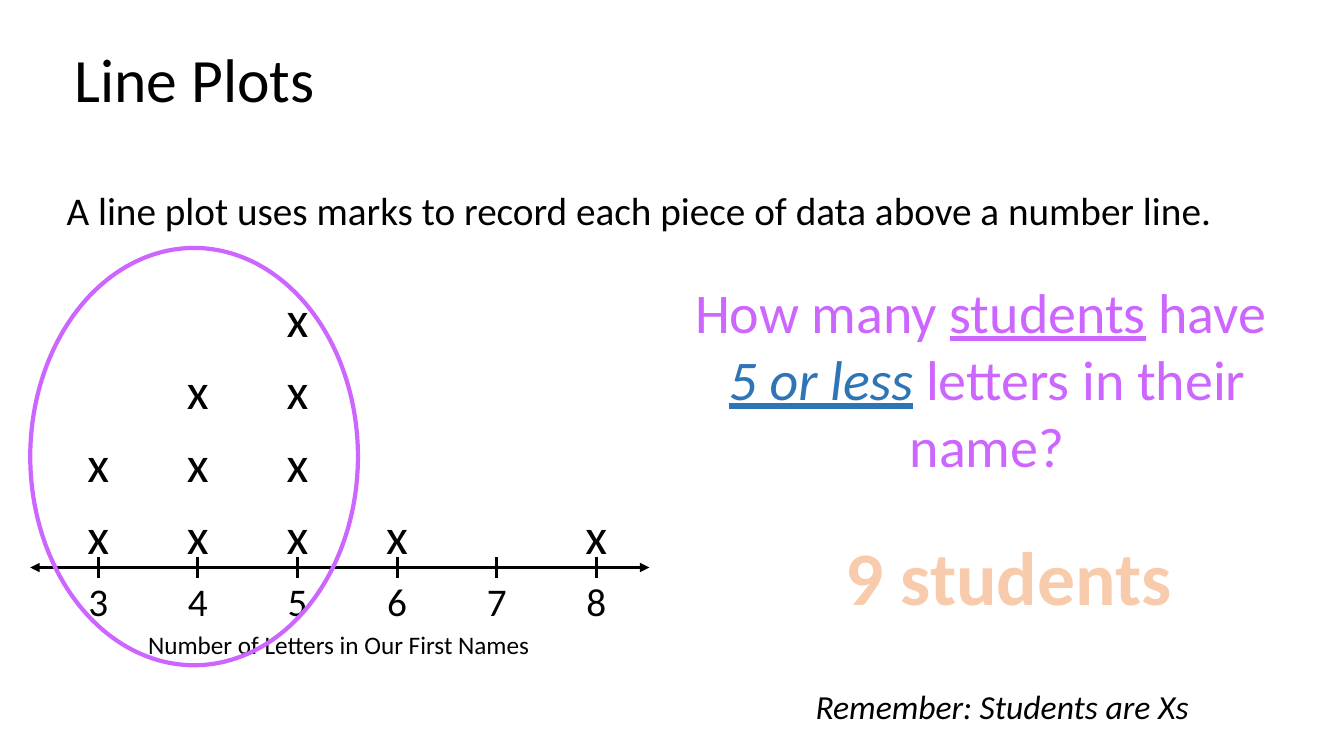
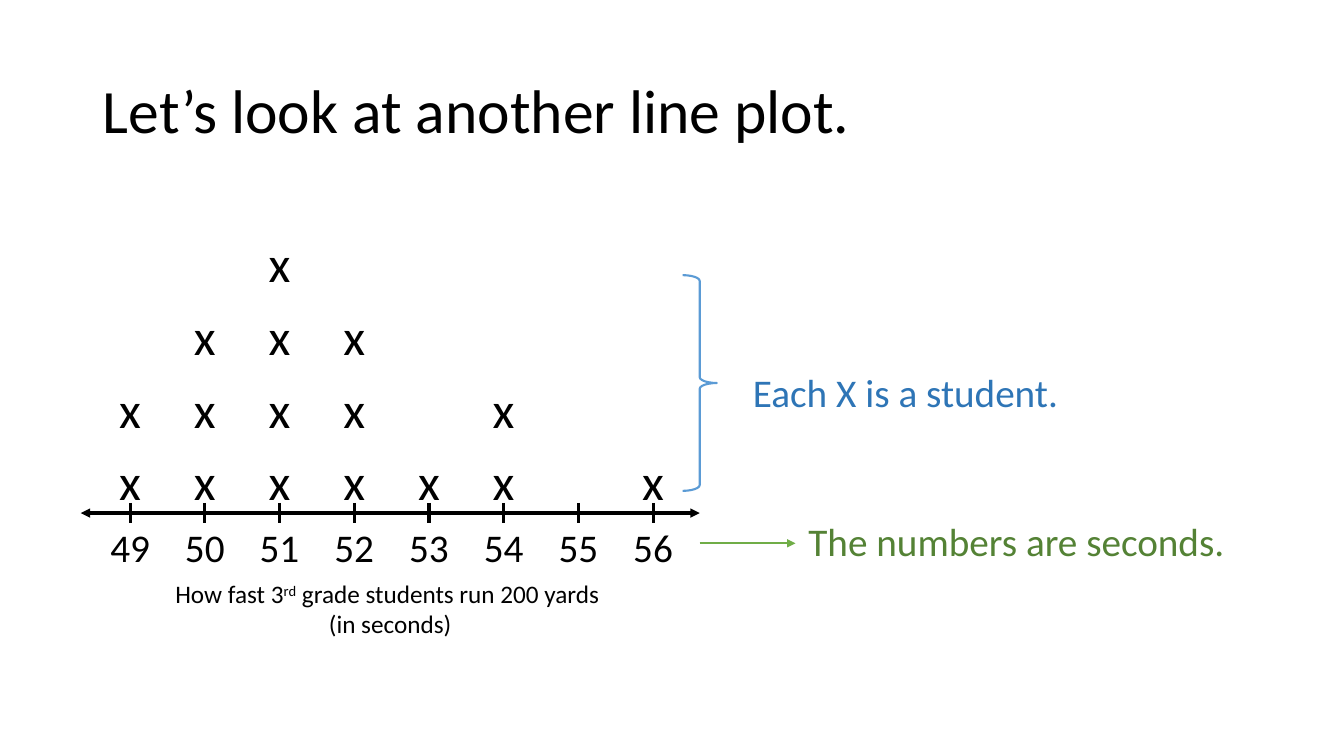
from lxml import etree
from pptx import Presentation
from pptx.dml.color import RGBColor
from pptx.enum.shapes import MSO_CONNECTOR, MSO_SHAPE
from pptx.enum.text import MSO_ANCHOR, MSO_AUTO_SIZE, PP_ALIGN
from pptx.oxml import parse_xml
from pptx.oxml.ns import nsdecls, qn
from pptx.util import Inches, Pt

FONT = "Calibri"
BLACK, PURPLE, BLUE, GREEN, PEACH = "000000", "CC66FF", "2E75B6", "548235", "F8CBAD"
BRACE_BLUE, ARROW_GREEN, ORANGE = "5B9BD5", "70AD47", "ED7D31"
NO_GRID_STYLE = "{2D5ABB26-0587-4C30-8999-92F81FD0307C}"

# Line plots: number below the axis -> how many x marks stand above it
NAME_LENGTHS = {"3": 2, "4": 3, "5": 4, "6": 1, "7": 0, "8": 1}
RUN_SECONDS = {"49": 2, "50": 3, "51": 4, "52": 3, "53": 1, "54": 2, "55": 0, "56": 1}

# Rich text: paragraphs of (text, what differs from the base style)
QUESTION = [
    [("How many ", {}), ("students", {"underline": True}), (" have ", {})],
    [("5 or less", {"color": BLUE, "italic": True, "underline": True}),
     (" ", {"color": BLUE, "italic": True}), ("letters in their name?", {})],
]
RUN_CAPTION = [[("How fast 3", {}), ("rd", {"baseline": 30000}),
                (" grade students run 200 yards ", {}), ("\n", {}), ("(in seconds)", {})]]

PLOT_WIDTH, MARK_ROWS, MARK_ROW, NUMBER_ROW = 5.93, 4, 0.72, 0.57
AXIS_DROP, AXIS_LENGTH, TICK = 2.81, 6.14, 0.2


def rgb(color):
    return RGBColor.from_string(color)


def style_run(run, size, color=BLACK, bold=False, italic=False, underline=False,
              baseline=None, outline=None):
    font = run.font
    font.name, font.size, font.color.rgb = FONT, Pt(size), rgb(color)
    font.bold, font.italic, font.underline = bold, italic, underline
    properties = run._r.get_or_add_rPr()
    if baseline:
        properties.set("baseline", str(baseline))
    if outline:
        properties.insert(0, parse_xml(
            f'<a:ln {nsdecls("a")} w="{Pt(1.75)}"><a:solidFill>'
            f'<a:srgbClr val="{outline}"/></a:solidFill></a:ln>'))


def fill_placeholder(placeholder, box, text, size, anchor):
    placeholder.left, placeholder.top, placeholder.width, placeholder.height = map(Inches, box)
    frame = placeholder.text_frame
    frame.text = text
    frame.auto_size = MSO_AUTO_SIZE.NONE
    frame.vertical_anchor = anchor
    paragraph = frame.paragraphs[0]
    paragraph.alignment, paragraph.line_spacing = PP_ALIGN.LEFT, 0.9
    style_run(paragraph.runs[0], size)
    return paragraph


def add_title(slide, box, text):
    fill_placeholder(slide.shapes.title, box, text, 44, MSO_ANCHOR.MIDDLE)


def add_statement(slide, box, text):
    """Fill the body placeholder with one paragraph that has no bullet."""
    paragraph = fill_placeholder(slide.placeholders[1], box, text, 28, MSO_ANCHOR.TOP)
    paragraph.space_before = Pt(10)
    properties = paragraph._p.get_or_add_pPr()
    properties.set("marL", "0")
    properties.set("indent", "0")
    etree.SubElement(properties, qn("a:buNone"))


def add_text(slide, box, content, size, align=PP_ALIGN.CENTER, wrap=True, **base):
    """Add a text box; content is a string or a list of rich paragraphs."""
    frame = slide.shapes.add_textbox(*map(Inches, box)).text_frame
    frame.word_wrap = wrap
    frame.auto_size = MSO_AUTO_SIZE.SHAPE_TO_FIT_TEXT
    paragraphs = [[(content, {})]] if isinstance(content, str) else content
    for index, pieces in enumerate(paragraphs):
        paragraph = frame.add_paragraph() if index else frame.paragraphs[0]
        paragraph.alignment = align
        for text, changes in pieces:
            if text == "\n":
                paragraph.add_line_break()
                continue
            run = paragraph.add_run()
            run.text = text
            style_run(run, size, **{**base, **changes})


def add_line(slide, start, end, color=BLACK, width=2.25, heads=()):
    """Draw a straight line; heads names the ends with a triangle."""
    line = slide.shapes.add_connector(MSO_CONNECTOR.STRAIGHT, *map(Inches, (*start, *end)))
    line.line.color.rgb, line.line.width = rgb(color), Pt(width)
    for head in heads:
        etree.SubElement(line.line._get_or_add_ln(), qn(f"a:{head}"), type="triangle")
    etree.SubElement(line._element.spPr, qn("a:effectLst"))


def add_outline(slide, preset, box, color, width):
    shape = slide.shapes.add_shape(preset, *map(Inches, box))
    shape.shadow.inherit = False
    shape.fill.background()
    shape.line.color.rgb, shape.line.width = rgb(color), Pt(width)
    return shape


def add_line_plot(slide, left, top, axis_left, counts):
    """Stack x marks in a table and draw the number line across it."""
    height = MARK_ROWS * MARK_ROW + NUMBER_ROW
    table = slide.shapes.add_table(MARK_ROWS + 1, len(counts),
                                   *map(Inches, (left, top, PLOT_WIDTH, height))).table
    table.first_row = table.horz_banding = False
    table._tbl.tblPr.find(qn("a:tableStyleId")).text = NO_GRID_STYLE
    for index, row in enumerate(table.rows):
        row.height = Inches(MARK_ROW if index < MARK_ROWS else NUMBER_ROW)

    column_width = PLOT_WIDTH / len(counts)
    for column, (number, count) in enumerate(counts.items()):
        table.columns[column].width = Inches(column_width)
        marks = [""] * (MARK_ROWS - count) + ["x"] * count
        for row, text in enumerate(marks + [number]):
            cell = table.cell(row, column)
            cell.fill.background()
            if not text:
                continue
            cell.text_frame.text = text
            paragraph = cell.text_frame.paragraphs[0]
            paragraph.alignment = PP_ALIGN.CENTER
            is_number = row == MARK_ROWS
            if is_number:
                cell.vertical_anchor = MSO_ANCHOR.BOTTOM
            style_run(paragraph.runs[0], 28 if is_number else 36)

    axis = top + AXIS_DROP
    add_line(slide, (axis_left, axis), (axis_left + AXIS_LENGTH, axis),
             heads=("headEnd", "tailEnd"))
    for column in range(len(counts)):
        x = left + (column + 0.5) * column_width
        add_line(slide, (x, axis - TICK / 2), (x, axis + TICK / 2))


def build_names_slide(deck):
    slide = deck.slides.add_slide(deck.slide_layouts[1])
    add_title(slide, (0.64, 0.32, 11.5, 0.99), "Line Plots")
    add_statement(slide, (0.56, 1.85, 11.89, 0.81),
                  "A line plot uses marks to record each piece of data above a number line.")
    add_line_plot(slide, 0.48, 2.82, 0.3, NAME_LENGTHS)
    add_text(slide, (0.61, 6.19, 5.5, 0.4), "Number of Letters in Our First Names", 18)
    add_text(slide, (6.39, 2.7, 6.8, 2.12), QUESTION, 40, color=PURPLE)
    add_outline(slide, MSO_SHAPE.OVAL, (0.3, 2.46, 3.25, 4.14), PURPLE, 3)
    add_text(slide, (8.27, 5.21, 3.47, 1.01), "9 students", 54, wrap=False,
             color=PEACH, bold=True, outline=ORANGE)
    add_text(slide, (6.54, 6.76, 6.8, 0.74), "Remember: Students are Xs", 24, italic=True)


def build_running_slide(deck):
    slide = deck.slides.add_slide(deck.slide_layouts[5])
    add_title(slide, (0.92, 0.4, 11.5, 1.45), "Let’s look at another line plot.")
    add_line_plot(slide, 0.92, 2.28, 0.8, RUN_SECONDS)
    add_text(slide, (1.12, 5.69, 5.5, 0.71), RUN_CAPTION, 18)
    brace = add_outline(slide, MSO_SHAPE.RIGHT_BRACE, (6.77, 2.73, 0.34, 2.14), BRACE_BLUE, 1.5)
    brace.adjustments[0] = 0.17
    add_text(slide, (7.37, 3.6, 4.8, 0.57), "Each X is a student.", 28,
             align=PP_ALIGN.LEFT, color=BLUE)
    add_line(slide, (6.94, 5.39), (7.89, 5.39), ARROW_GREEN, 1.5, heads=("tailEnd",))
    add_text(slide, (7.92, 5.08, 4.8, 0.57), "The numbers are seconds.", 28,
             align=PP_ALIGN.LEFT, color=GREEN)


def main():
    deck = Presentation()
    deck.slide_width, deck.slide_height = Inches(13.33), Inches(7.5)
    build_names_slide(deck)
    build_running_slide(deck)
    deck.save("out.pptx")


if __name__ == "__main__":
    main()
